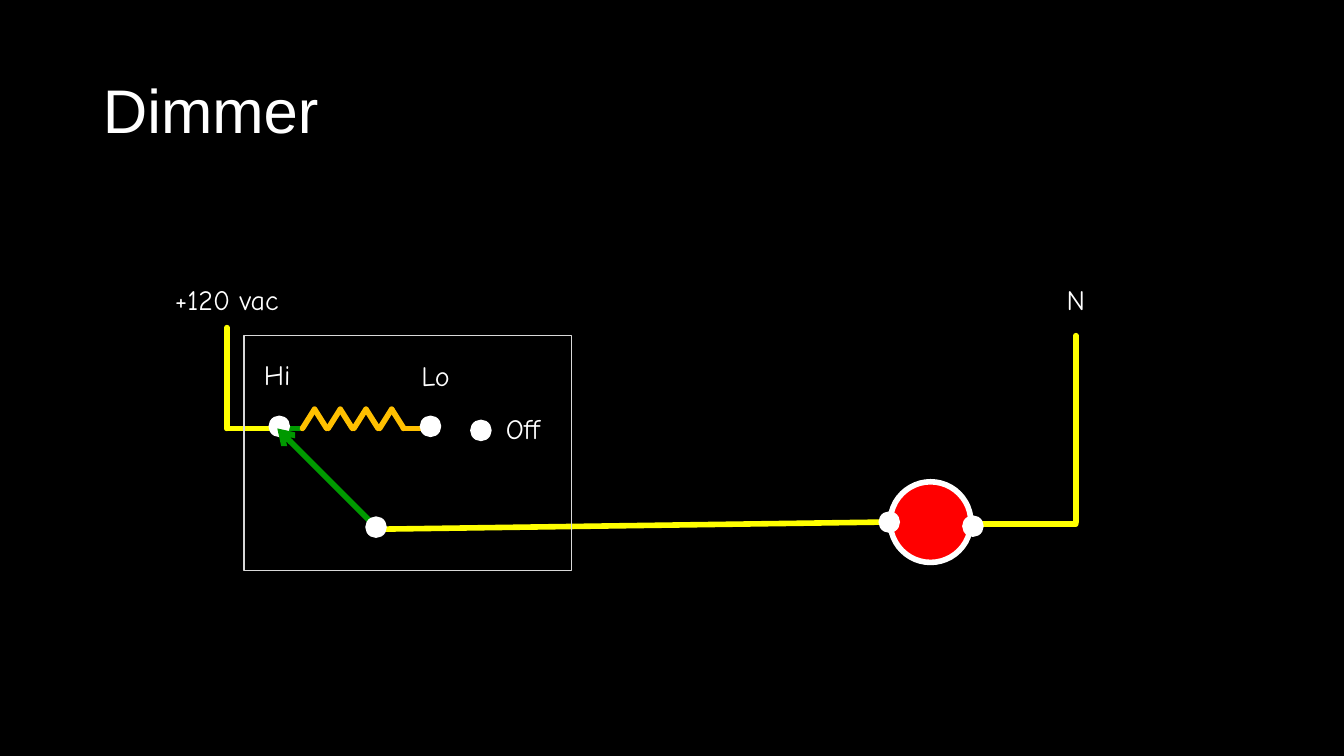
from lxml import etree
from pptx import Presentation
from pptx import util as u
from pptx.dml.color import RGBColor
from pptx.enum import shapes, text
from pptx.oxml.ns import qn

BLACK = RGBColor(0x00, 0x00, 0x00)
WHITE = RGBColor(0xFF, 0xFF, 0xFF)
GRAY = RGBColor(0xD9, 0xD9, 0xD9)
YELLOW = RGBColor(0xFF, 0xFF, 0x00)
ORANGE = RGBColor(0xFF, 0xC0, 0x00)
GREEN = RGBColor(0x00, 0x99, 0x00)
RED = RGBColor(0xFF, 0x00, 0x00)

# Content: lengths in inches
TITLE = "Dimmer"
LABELS = [  # text, left, top, alignment
    ("+120 vac", 1.5, 2.75, "CENTER"),
    ("N", 9.92, 2.75, "CENTER"),
    ("Lo", 3.57, 3.51, "CENTER"),
    ("Off", 4.92, 4.03, "LEFT"),
    ("Hi", 2, 3.5, "CENTER"),
]
WIRES = [  # start, end
    ((2.25, 4.25), (2.75, 4.25)),
    ((3.75, 5.25), (8.72, 5.18)),
    ((9.67, 5.2), (10.67, 5.2)),
    ((2.25, 3.25), (2.25, 4.25)),
    ((10.67, 3.33), (10.67, 5.18)),
]
HI, PIVOT = (2.75, 4.25), (3.75, 5.25)
CONTACTS = [(2.67, 4.13), (4.17, 4.13), (4.67, 4.17), (8.72, 5.08), (9.55, 5.12)]
PIVOT_CONTACT = (3.63, 5.13)
CONTACT_SIZE = 0.2

# Resistor geometry
RESISTOR_LEFT, RESISTOR_BASE, RESISTOR_PEAK = 3, 4.25, 4.06
TEETH, TOOTH_PITCH, TOOTH_HALF = 4, 0.255, 0.12


def add_line(slide, start, end, color, cap="rnd", arrow=False):
    line = slide.shapes.add_connector(
        shapes.MSO_CONNECTOR.STRAIGHT, *[u.Inches(v) for v in (*start, *end)])
    line.line.color.rgb = color
    line.line.width = u.Pt(4)
    properties = line._element.spPr
    outline = properties.find(qn("a:ln"))
    outline.set("cap", cap)
    if arrow:
        etree.SubElement(outline, qn("a:tailEnd"), type="arrow")
    etree.SubElement(properties, qn("a:effectLst"))


def add_outline_shape(slide, kind, place, fill, color, width):
    shape = slide.shapes.add_shape(kind, *[u.Inches(v) for v in place])
    shape.shadow.inherit = False
    if fill is None:
        shape.fill.background()
    else:
        shape.fill.solid()
        shape.fill.fore_color.rgb = fill
    shape.line.color.rgb = color
    shape.line.width = u.Pt(width)


def add_contact(slide, spot):
    add_outline_shape(slide, shapes.MSO_SHAPE.OVAL,
                      (*spot, CONTACT_SIZE, CONTACT_SIZE), WHITE, WHITE, 1)


def write(frame, words, font, size, align):
    para = frame.paragraphs[0]
    para.alignment = getattr(text.PP_ALIGN, align)
    span = para.add_run()
    span.text = words
    for name, value in {"name": font, "size": u.Pt(size)}.items():
        setattr(span.font, name, value)
    span.font.color.rgb = WHITE
    return para


def main():
    deck = Presentation()
    deck.slide_width, deck.slide_height = u.Inches(13.33), u.Inches(7.5)
    slide = deck.slides.add_slide(deck.slide_layouts[5])
    slide.background.fill.solid()
    slide.background.fill.fore_color.rgb = BLACK

    # Title
    title = slide.shapes.title
    place = {"left": 0.92, "top": 0.4, "width": 11.5, "height": 1.45}
    for name, value in place.items():
        setattr(title, name, u.Inches(value))
    title.text_frame.vertical_anchor = text.MSO_ANCHOR.MIDDLE
    write(title.text_frame, TITLE, "Arial", 44, "LEFT").line_spacing = 0.9

    # Resistor with its two leads
    add_line(slide, (4, RESISTOR_BASE), (4.24, RESISTOR_BASE), ORANGE)
    add_line(slide, HI, (2.99, RESISTOR_BASE), GREEN, cap="flat")
    for tooth in range(TEETH):
        left = RESISTOR_LEFT + tooth * TOOTH_PITCH
        peak = (left + TOOTH_HALF, RESISTOR_PEAK)
        for foot in (left, left + 2 * TOOTH_HALF):
            add_line(slide, (foot, RESISTOR_BASE), peak, ORANGE)

    # Wires, lamp and contacts
    for start, end in WIRES:
        add_line(slide, start, end, YELLOW)
    add_outline_shape(slide, shapes.MSO_SHAPE.OVAL, (8.83, 4.78, 0.8, 0.8), RED, WHITE, 4)
    for spot in CONTACTS:
        add_contact(slide, spot)

    # Labels
    for words, left, top, align in LABELS:
        box = slide.shapes.add_textbox(*[u.Inches(v) for v in (left, top, 1.5, 0.44)])
        box.text_frame.word_wrap = True
        box.text_frame.auto_size = text.MSO_AUTO_SIZE.SHAPE_TO_FIT_TEXT
        write(box.text_frame, words, "Comic Neue", 20, align)

    # Switch arm and dimmer housing
    add_line(slide, PIVOT, HI, GREEN, cap="flat", arrow=True)
    add_contact(slide, PIVOT_CONTACT)
    add_outline_shape(slide, shapes.MSO_SHAPE.RECTANGLE, (2.42, 3.33, 3.25, 2.33), None, GRAY, 1)

    deck.save("out.pptx")


if __name__ == "__main__":
    main()
